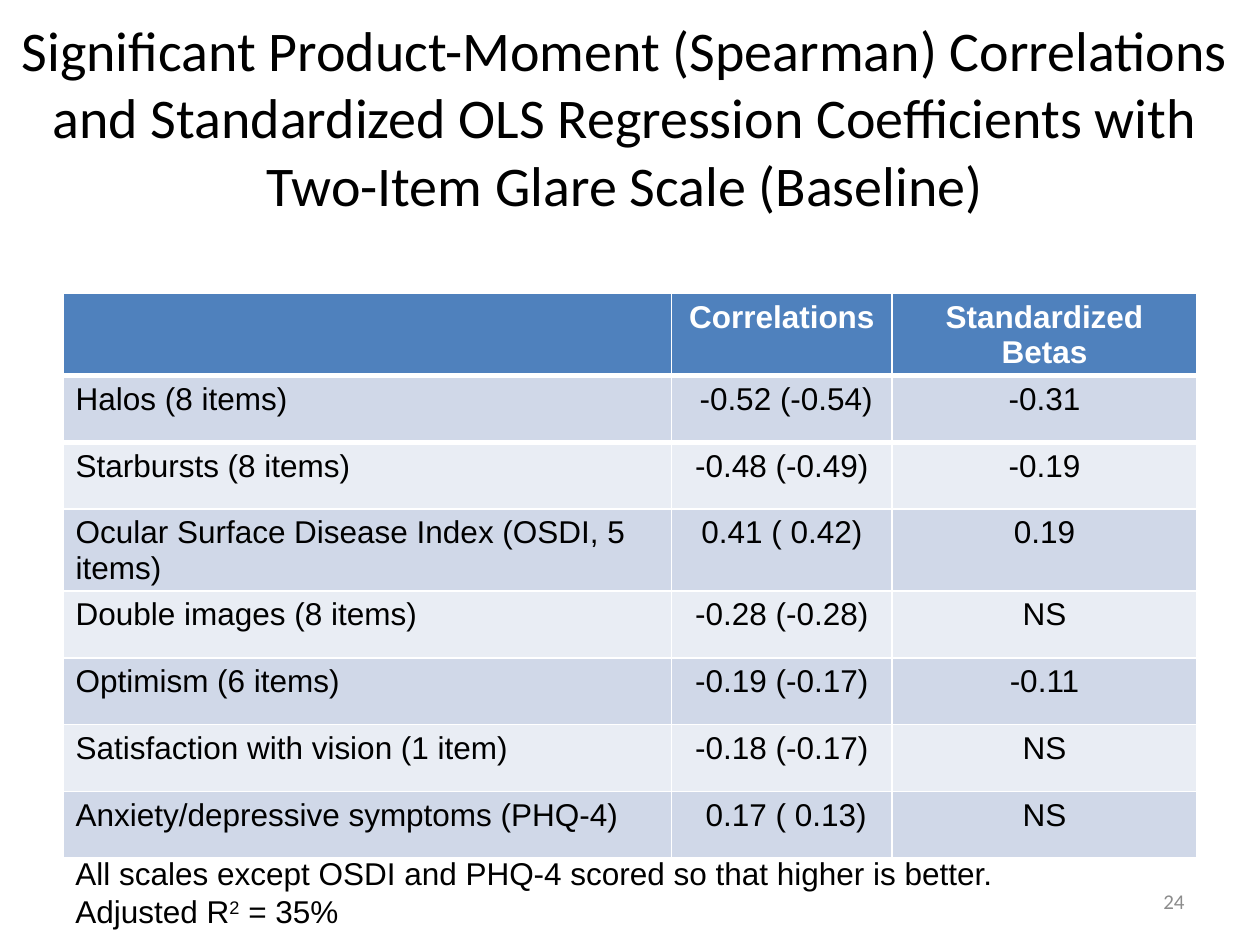
"""Build the slide of glare scale correlations and standardized betas."""
from dataclasses import dataclass

import lxml.etree
import pptx
import pptx.dml.color
import pptx.enum.text
import pptx.oxml.ns
import pptx.util

Inches = pptx.util.Inches
Pt = pptx.util.Pt
RGBColor = pptx.dml.color.RGBColor
Align = pptx.enum.text.PP_ALIGN
Anchor = pptx.enum.text.MSO_ANCHOR
qn = pptx.oxml.ns.qn

BLACK = RGBColor(0x00, 0x00, 0x00)
WHITE = RGBColor(0xFF, 0xFF, 0xFF)
GRAY = RGBColor(0x8C, 0x8C, 0x8C)
HEADER_BLUE = RGBColor(0x4F, 0x81, 0xBD)
BANDS = (RGBColor(0xD0, 0xD8, 0xE8), RGBColor(0xE9, 0xED, 0xF4))


@dataclass(frozen=True)
class TextStyle:
    size: int
    font: str
    color: RGBColor
    align: Align = Align.LEFT
    bold: bool = False


@dataclass(frozen=True)
class Label:
    left: float
    top: float
    width: float
    height: float
    text: str
    style: TextStyle
    anchor: Anchor = Anchor.MIDDLE


@dataclass(frozen=True)
class ScaleRow:
    scale: str
    correlation: str
    beta: str


TITLE = Label(
    0, 0.3, 9.92, 1.25,
    "Significant Product-Moment (Spearman) Correlations and Standardized "
    "OLS Regression Coefficients with Two-Item Glare Scale (Baseline)",
    TextStyle(32, "Calibri", BLACK, Align.CENTER),
)
PAGE_NUMBER = Label(
    7.17, 6.95, 2.33, 0.4, "24", TextStyle(12, "Calibri", GRAY, Align.RIGHT)
)
NOTE = Label(
    0.5, 6.73, 8.58, 0.71,
    "All scales except OSDI and PHQ-4 scored so that higher is better.\v"
    "Adjusted R",
    TextStyle(18, "Arial", BLACK), Anchor.TOP,
)
COLUMN_WIDTHS = (4.83, 1.75, 2.42)
ROW_HEIGHT = 0.53
ROWS = (
    ScaleRow("", "Correlations", "Standardized Betas"),
    ScaleRow("Halos (8 items)", " -0.52 (-0.54)", "-0.31"),
    ScaleRow("Starbursts (8 items)", "-0.48 (-0.49)", "-0.19"),
    ScaleRow("Ocular Surface Disease Index (OSDI, 5 items)", "0.41 ( 0.42)", "0.19"),
    ScaleRow("Double images (8 items)", "-0.28 (-0.28)", "NS"),
    ScaleRow("Optimism (6 items)", "-0.19 (-0.17)", "-0.11"),
    ScaleRow("Satisfaction with vision (1 item)", "-0.18 (-0.17)", "NS"),
    ScaleRow("Anxiety/depressive symptoms (PHQ-4)", " 0.17 ( 0.13)", "NS"),
)


def write(para, text: str, style: TextStyle) -> None:
    """Fill a paragraph with text in one style."""
    para.text = text
    para.alignment = style.align
    para.font.size = Pt(style.size)
    para.font.name = style.font
    para.font.bold = style.bold
    para.font.color.rgb = style.color


def add_label(page, label: Label):
    """Add a wrapped text box and return its paragraph."""
    box = page.shapes.add_textbox(
        Inches(label.left), Inches(label.top),
        Inches(label.width), Inches(label.height),
    )
    box.text_frame.word_wrap = True
    box.text_frame.vertical_anchor = label.anchor
    para = box.text_frame.paragraphs[0]
    write(para, label.text, label.style)
    return para


def add_note(page) -> None:
    """Add the scoring note that ends with the squared R."""
    para = add_label(page, NOTE)
    exponent = para.add_run()
    exponent.text = "2"
    exponent._r.get_or_add_rPr().set("baseline", "30000")
    para.add_run().text = " = 35%"


def set_border(cell, side: str, points: int) -> None:
    """Give one side of a cell a white line."""
    line = lxml.etree.Element(qn(f"a:{side}"), w=str(Pt(points)))
    fill = lxml.etree.SubElement(line, qn("a:solidFill"))
    lxml.etree.SubElement(fill, qn("a:srgbClr"), val=str(WHITE))
    cell._tc.get_or_add_tcPr().insert(0, line)


def add_scale_table(page) -> None:
    """Add the banded table of scales."""
    table = page.shapes.add_table(
        len(ROWS), len(COLUMN_WIDTHS), Inches(0.5), Inches(2.33),
        Inches(sum(COLUMN_WIDTHS)), Inches(ROW_HEIGHT * len(ROWS)),
    ).table
    for column, width in zip(table.columns, COLUMN_WIDTHS):
        column.width = Inches(width)
    for row_index, row in enumerate(ROWS):
        table.rows[row_index].height = Inches(ROW_HEIGHT)
        header = row_index == 0
        fill = HEADER_BLUE if header else BANDS[(row_index - 1) % 2]
        for column_index, text in enumerate((row.scale, row.correlation, row.beta)):
            cell = table.cell(row_index, column_index)
            cell.margin_bottom = Inches(0)
            cell.fill.solid()
            cell.fill.fore_color.rgb = fill
            if row_index < 2:
                set_border(cell, "lnB" if header else "lnT", 3)
            align = Align.CENTER if column_index else Align.LEFT
            style = TextStyle(18, "Arial", WHITE if header else BLACK, align, header)
            write(cell.text_frame.paragraphs[0], text, style)


def main() -> None:
    """Build and save the deck."""
    deck = pptx.Presentation()
    deck.slide_width = Inches(10)
    deck.slide_height = Inches(7.5)
    page = deck.slides.add_slide(deck.slide_layouts[6])
    add_label(page, TITLE)
    add_scale_table(page)
    add_label(page, PAGE_NUMBER)
    add_note(page)
    deck.save("out.pptx")


if __name__ == "__main__":
    main()
